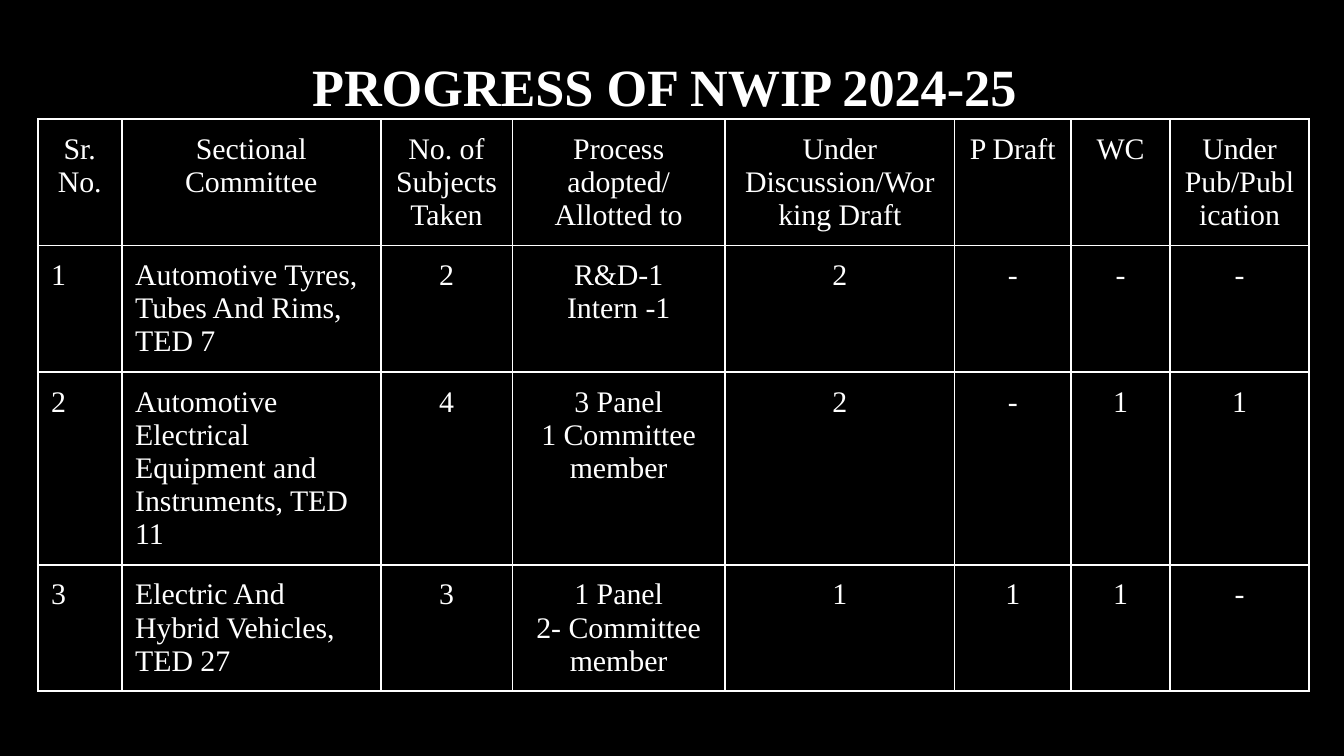
"""Build the NWIP 2024-25 progress slide."""

import dataclasses

import lxml.etree
import pptx
import pptx.dml.color
import pptx.enum.text
import pptx.oxml.ns
import pptx.util

PX = 9525
FONT = "Times New Roman"
BLACK = pptx.dml.color.RGBColor(0x00, 0x00, 0x00)
WHITE = pptx.dml.color.RGBColor(0xFF, 0xFF, 0xFF)
LEFT = pptx.enum.text.PP_ALIGN.LEFT
CENTER = pptx.enum.text.PP_ALIGN.CENTER


@dataclasses.dataclass(frozen=True)
class Column:
    heading: str
    width: int
    align: pptx.enum.text.PP_ALIGN = CENTER


@dataclasses.dataclass(frozen=True)
class Committee:
    height: int
    entries: tuple[str, ...]


COLUMNS = (
    Column("Sr. No.", 60, LEFT),
    Column("Sectional Committee", 185, LEFT),
    Column("No. of Subjects Taken", 94),
    Column("Process adopted/ Allotted to", 152),
    Column("Under Discussion/Working Draft", 164),
    Column("P Draft", 83),
    Column("WC", 71),
    Column("Under Pub/Publication", 99),
)
HEADING_HEIGHT = 80
COMMITTEES = (
    Committee(82, ("1", "Automotive Tyres, Tubes And Rims, TED 7", "2",
                   "R&D-1\vIntern -1", "2", "-", "-", "-")),
    Committee(99, ("2", "Automotive Electrical Equipment and Instruments, TED 11", "4",
                   "3 Panel\n1 Committee member", "2", "-", "1", "1")),
    Committee(60, ("3", "Electric And Hybrid Vehicles, TED 27", "3",
                   "1 Panel\n2- Committee member", "1", "1", "1", "-")),
)


def px(length: int) -> pptx.util.Emu:
    return pptx.util.Emu(length * PX)


def write(frame, text: str, *, size: int = 16, bold: bool = False,
          align=CENTER, spacing: float = 1.0) -> None:
    frame.word_wrap = True
    frame.text = text
    for paragraph in frame.paragraphs:
        paragraph.alignment = align
        paragraph.line_spacing = spacing
        for run in paragraph.runs:
            run.font.name = FONT
            run.font.size = pptx.util.Pt(size)
            run.font.bold = bold
            run.font.color.rgb = WHITE


def set_insets(box) -> None:
    inset = pptx.util.Inches(0.1)
    box.margin_left = box.margin_right = inset
    box.margin_top = box.margin_bottom = inset


def set_borders(cell) -> None:
    properties = cell._tc.get_or_add_tcPr()
    for index, side in enumerate(("lnL", "lnR", "lnT", "lnB")):
        line = lxml.etree.Element(pptx.oxml.ns.qn(f"a:{side}"), w=str(pptx.util.Pt(1)))
        fill = lxml.etree.SubElement(line, pptx.oxml.ns.qn("a:solidFill"))
        lxml.etree.SubElement(fill, pptx.oxml.ns.qn("a:srgbClr"), val=str(WHITE))
        properties.insert(index, line)


def fill_cell(cell, text: str, align) -> None:
    cell.fill.background()
    cell.vertical_anchor = pptx.enum.text.MSO_ANCHOR.TOP
    set_insets(cell)
    set_borders(cell)
    write(cell.text_frame, text, align=align)


def add_title(slide) -> None:
    title = slide.shapes.title
    title.left, title.top, title.width, title.height = map(px, (27, 25, 895, 60))
    frame = title.text_frame
    frame.auto_size = pptx.enum.text.MSO_AUTO_SIZE.NONE
    frame.vertical_anchor = pptx.enum.text.MSO_ANCHOR.TOP
    set_insets(frame)
    write(frame, "PROGRESS OF NWIP 2024-25", size=28, bold=True, spacing=1.1)


def add_progress_table(slide) -> None:
    width = sum(column.width for column in COLUMNS)
    progress = slide.shapes.add_table(
        len(COMMITTEES) + 1, len(COLUMNS), px(27), px(85), px(width), px(435)).table
    progress.first_row = progress.horz_banding = False
    progress.rows[0].height = px(HEADING_HEIGHT)
    for col, column in enumerate(COLUMNS):
        progress.columns[col].width = px(column.width)
        fill_cell(progress.cell(0, col), column.heading, CENTER)
    for row, committee in enumerate(COMMITTEES, start=1):
        progress.rows[row].height = px(committee.height)
        for col, (column, entry) in enumerate(zip(COLUMNS, committee.entries)):
            fill_cell(progress.cell(row, col), entry, column.align)


def main() -> None:
    deck = pptx.Presentation()
    deck.slide_width, deck.slide_height = px(960), px(540)
    slide = deck.slides.add_slide(deck.slide_layouts[5])
    slide.background.fill.solid()
    slide.background.fill.fore_color.rgb = BLACK
    add_title(slide)
    add_progress_table(slide)
    deck.save("out.pptx")


if __name__ == "__main__":
    main()
